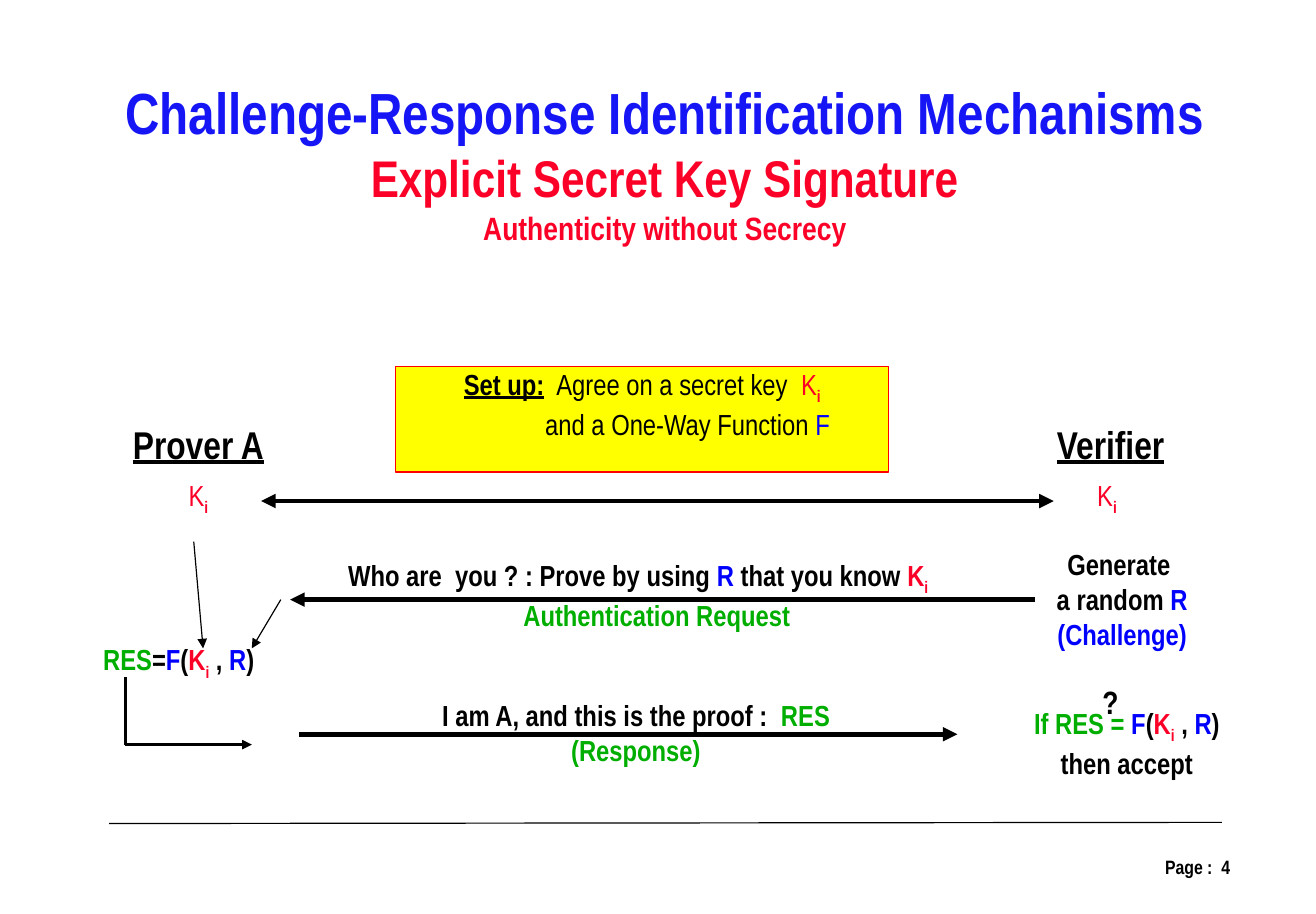
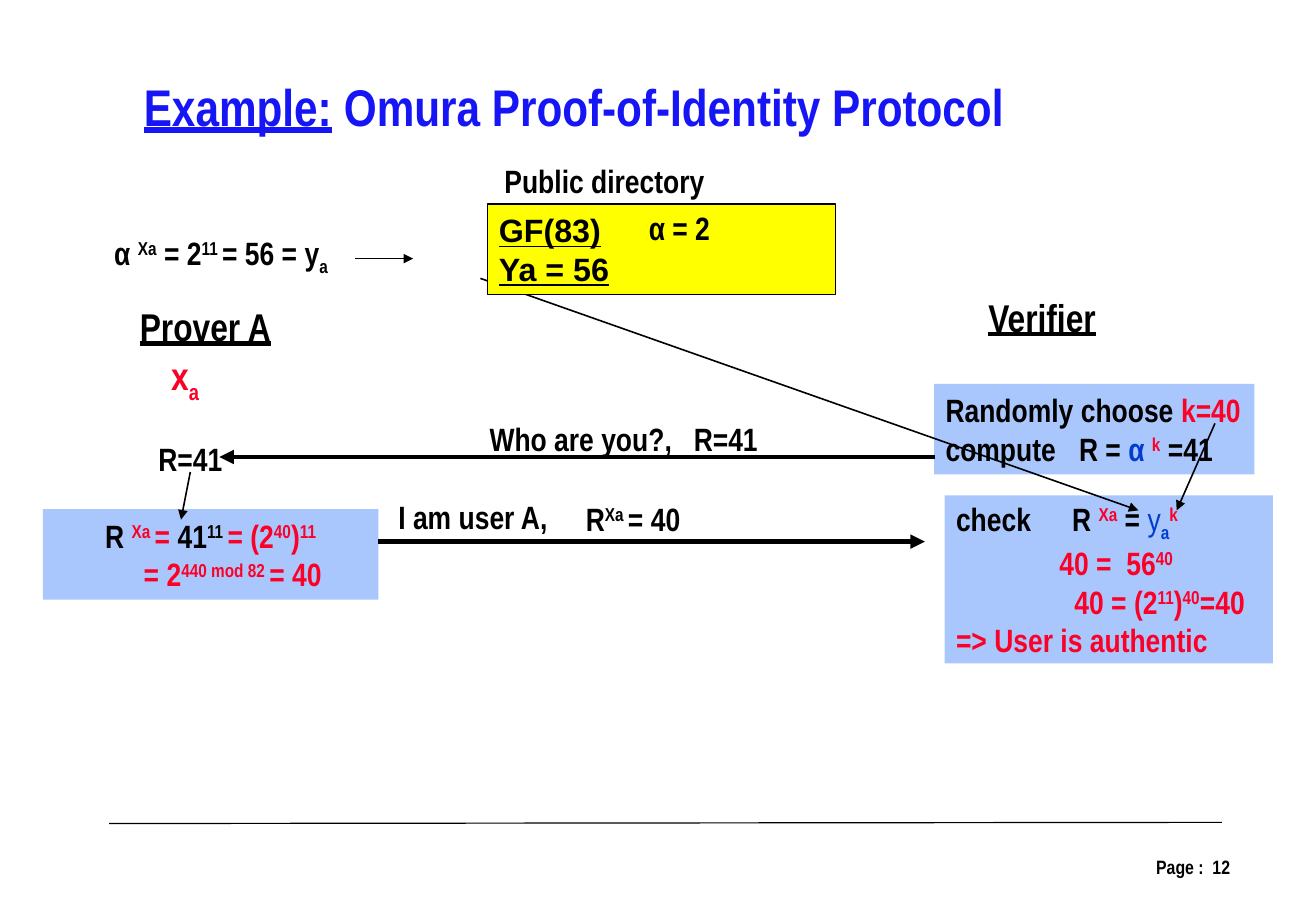
from dataclasses import dataclass

from lxml.etree import SubElement
from pptx import Presentation
from pptx.dml.color import RGBColor
from pptx.enum.shapes import MSO_CONNECTOR, MSO_SHAPE
from pptx.enum.text import MSO_ANCHOR, MSO_AUTO_SIZE, PP_ALIGN
from pptx.oxml.ns import qn
from pptx.util import Inches, Pt


@dataclass(frozen=True)
class Theme:
    font: str = "Arial Narrow"
    black: str = "000000"
    title: str = "1515F5"
    red: str = "FC0128"
    blue: str = "0000FF"
    navy: str = "023DD0"
    green: str = "00AE00"
    yellow: str = "FFFF00"
    pale: str = "A9C7FD"
    edge: str = "FF0000"
    huge: int = 36
    big: int = 32
    role: int = 24
    mid: int = 20
    body: int = 18
    foot: int = 12
    hair: float = 0.75
    thin: float = 1
    firm: float = 1.5
    bold: float = 3


T = Theme()
LEFT, MID, RIGHT = PP_ALIGN.LEFT, PP_ALIGN.CENTER, PP_ALIGN.RIGHT
BASE = {"sub": "-25000", "sup": "30000"}


def write(shape, lines, size, align=MID, indents=(), tab=0,
          anchor=MSO_ANCHOR.MIDDLE, font=T.font):
    """Fill a shape with lines of runs: (text, colour, marks, own size)."""
    frame = shape.text_frame
    frame.auto_size = MSO_AUTO_SIZE.NONE
    frame.word_wrap = align != MID or bool(indents)
    frame.vertical_anchor = anchor
    frame.margin_left = Inches(0.1)
    frame.margin_right = Inches(0 if align == LEFT else 0.1)
    frame.margin_top = frame.margin_bottom = Inches(0.05)
    for i, line in enumerate(lines):
        para = frame.paragraphs[0] if i == 0 else frame.add_paragraph()
        para.alignment = align
        props = para._p.get_or_add_pPr()
        if indents:
            props.set("marL", str(Inches(indents[i])))
            props.set("indent", "0")
        if tab:
            stops = SubElement(props, qn("a:tabLst"))
            SubElement(stops, qn("a:tab"), pos=str(Inches(tab)), algn="l")
        for text, color, *more in line:
            marks = more[0].split() if more else []
            run = para.add_run()
            run.text = text
            run.font.name = font
            run.font.size = Pt(more[1] if len(more) > 1 else size)
            run.font.bold = "plain" not in marks
            run.font.underline = "under" in marks
            run.font.color.rgb = RGBColor.from_string(color)
            for mark in BASE.keys() & set(marks):
                run._r.get_or_add_rPr().set("baseline", BASE[mark])


def draw(slide, start, end, width, heads=("tailEnd",)):
    points = [Inches(n) for n in (*start, *end)]
    link = slide.shapes.add_connector(MSO_CONNECTOR.STRAIGHT, *points)
    link.line.width = Pt(width)
    link.line.color.rgb = RGBColor.from_string(T.black)
    for head in heads:
        SubElement(link.line._get_or_add_ln(), qn(f"a:{head}"), type="triangle")
    SubElement(link._element.spPr, qn("a:effectLst"))


deck = Presentation()
deck.slide_width, deck.slide_height = Inches(11.34), Inches(7.88)

# Titles, rules and page numbers
pages = [
    (4, (0.94, 0.61, 9.58, 1.58), [
        [("Challenge-Response Identification Mechanisms", T.title, "", T.huge)],
        [("Explicit Secret Key Signature", T.red)],
        [("Authenticity without Secrecy", T.red, "", T.mid)]]),
    (12, (1.11, 0.6, 7.68, 0.64), [
        [("Example:", T.title, "under"),
         (" Omura Proof-of-Identity Protocol", T.title)]]),
]
for number, place, lines in pages:
    slide = deck.slides.add_slide(deck.slide_layouts[5])
    title = slide.shapes.title
    title.left, title.top, title.width, title.height = map(Inches, place)
    write(title, lines, T.big, anchor=MSO_ANCHOR.TOP)
    draw(slide, (0.94, 7.1), (10.53, 7.09), T.hair, ())
    foot = slide.shapes.add_textbox(*map(Inches, (8.14, 7.31, 2.56, 0.32)))
    write(foot, [[(f"Page :  {number}", T.black)]], T.foot, RIGHT)

first, second = deck.slides

# Filled boxes
key = [("K", T.red, "plain"), ("i", T.red, "sub")]
setup = [
    [("Set up:", T.black, "under"),
     ("  Agree on a secret key  ", T.black, "plain"), *key],
    [("and a One-Way Function ", T.black, "plain"), ("F", T.blue, "plain")],
]
choose = [
    [("Randomly choose ", T.black), ("k=40", T.red)],
    [("compute\tR = ", T.black), ("α ", T.navy), ("k", T.red, "sup"),
     (" =41", T.black)],
]
answer = [
    [("R ", T.black), ("Xa ", T.red, "sup"), ("= ", T.red), ("41", T.black),
     ("11 ", T.black, "sup"), ("= (2", T.red), ("40", T.red, "sup"),
     (")", T.red), ("11", T.red, "sup")],
    [("= 2", T.red), ("440 mod 82 ", T.red, "sup"), ("= 40", T.red)],
]
check = [
    [("check\tR ", T.black), ("Xa", T.red, "sup"), (" = ", T.black),
     ("y", T.navy, "plain"), ("a", T.navy, "sub"), ("k", T.red, "sup")],
    [("40 =  56", T.red), ("40", T.red, "sup")],
    [("40 = (2", T.red), ("11", T.red, "sup"), (")", T.red),
     ("40", T.red, "sup"), ("=40", T.red)],
    [("=> User is authentic", T.red)],
]
entry = [[("GF(83)", T.black, "under")], [("Ya = 56", T.black, "under")]]

boxes = [
    (first, (3.41, 3.16, 4.25, 0.91), T.yellow, T.edge, T.hair, setup, T.body,
     dict(indents=(0, 0.78), anchor=MSO_ANCHOR.TOP)),
    (second, (8.05, 3.31, 2.76, 0.78), T.pale, None, 0, choose, T.mid,
     dict(align=LEFT, tab=1.15)),
    (second, (0.37, 4.39, 2.89, 0.78), T.pale, None, 0, answer, T.mid,
     dict(indents=(0, 0.38))),
    (second, (8.14, 4.27, 2.83, 1.45), T.pale, None, 0, check, T.mid,
     dict(align=LEFT, indents=(0, 0.89, 1.02, 0), tab=0.85)),
    (second, (4.2, 1.76, 3, 0.78), T.yellow, T.black, T.thin, entry, T.mid,
     dict(align=LEFT, font="Arial")),
]
# The diagonal passes over the pale boxes and under the yellow one
for slide, place, fill, edge, width, lines, size, extra in boxes:
    if lines is entry:
        draw(second, (4.14, 2.4), (9.81, 4.4), T.thin)
    box = slide.shapes.add_shape(MSO_SHAPE.RECTANGLE, *map(Inches, place))
    box.shadow.inherit = False
    box.fill.solid()
    box.fill.fore_color.rgb = RGBColor.from_string(fill)
    if edge:
        box.line.color.rgb = RGBColor.from_string(edge)
        box.line.width = Pt(width)
    else:
        box.line.fill.background()
    write(box, lines, size, **extra)
    if lines is setup:
        box.text_frame.margin_top = 0

# Arrows
arrows = [
    (first, (8.92, 5.17), (2.5, 5.17), T.bold),
    (first, (2.58, 6.33), (8.25, 6.33), T.bold),
    (first, (2.42, 5.17), (2.17, 5.59), T.hair),
    (first, (1.67, 4.67), (1.75, 5.59), T.hair),
    (first, (1.08, 6.42), (2.17, 6.42), T.firm),
    (second, (8.06, 3.94), (1.89, 3.94), T.bold),
    (second, (3.26, 4.67), (7.97, 4.67), T.bold),
    (second, (3.06, 2.23), (3.56, 2.23), T.thin),
    (second, (1.64, 4.07), (1.56, 4.48), T.thin),
    (second, (10.47, 3.65), (10.14, 4.4), T.thin),
]
for arrow in arrows:
    draw(*arrow)
draw(first, (9.08, 4.32), (2.25, 4.32), T.bold, ("headEnd", "tailEnd"))
draw(first, (1.08, 5.84), (1.08, 6.42), T.firm, ())

# Labels
prover = [[("Prover A", T.black, "under")]]
tester = [[("Verifier", T.black, "under")]]
proof = [("F", T.blue), ("(", T.black), ("K", T.red), ("i", T.red, "sub"),
         (" , ", T.black), ("R", T.blue), (")", T.black)]
labels = [
    (first, (1.04, 3.58, 1.34, 0.5), T.role, prover),
    (first, (9, 3.58, 1.14, 0.5), T.role, tester),
    (first, (1.52, 4.08, 0.38, 0.41), T.body, [key]),
    (first, (9.35, 4.08, 0.38, 0.41), T.body, [key]),
    (first, (2.87, 4.77, 5.26, 0.41), T.body, [
        [("Who are  you ? : Prove by using ", T.black), ("R", T.blue),
         (" that you know ", T.black), ("K", T.red), ("i", T.red, "sub")]]),
    (first, (4.4, 5.1, 2.52, 0.41), T.body, [
        [("Authentication Request", T.green)]]),
    (first, (9, 4.66, 1.34, 1.01), T.body, [
        [("Generate ", T.black)],
        [("a random ", T.black), ("R", T.blue)],
        [("(Challenge)", T.blue)]]),
    (first, (0.78, 5.5, 1.52, 0.41), T.body, [
        [("RES", T.green), ("=", T.black), *proof]]),
    (first, (3.69, 5.96, 3.58, 0.71), T.body, [
        [("I am A, and this is the proof :  ", T.black), ("RES", T.green)],
        [("(Response)", T.green)]]),
    (first, (8.8, 6.05, 1.82, 0.71), T.body, [
        [("If RES = ", T.green), *proof], [("then accept", T.black)]]),
    (first, (9.4, 5.83, 0.34, 0.44), T.mid, [[("?", T.black)]]),
    (second, (1.1, 2.56, 1.34, 0.5), T.role, prover),
    (second, (8.41, 2.48, 1.14, 0.5), T.role, tester),
    (second, (1.37, 3.01, 0.45, 0.51), T.role, [
        [("x", T.red), ("a", T.red, "sub")]]),
    (second, (0.83, 1.98, 2.15, 0.44), T.mid, [
        [("α ", T.black), ("Xa", T.black, "sup"), (" = 2", T.black),
         ("11 ", T.black, "sup"), ("= 56 = y", T.black),
         ("a", T.black, "sub")]]),
    (second, (3.3, 4.23, 1.55, 0.44), T.mid, [[("I am user A,", T.black)]]),
    (second, (4.93, 4.25, 1.05, 0.44), T.mid, [
        [("R", T.black), ("Xa ", T.black, "sup"), ("= 40", T.black)]]),
    (second, (1.23, 3.73, 0.82, 0.44), T.mid, [[("R=41", T.black)]]),
    (second, (4.21, 1.34, 2, 0.44), T.mid, [[("Public directory", T.black)]]),
    (second, (5.47, 1.74, 0.77, 0.44), T.mid, [[("α = 2", T.black)]]),
]
for slide, place, size, lines in labels:
    write(slide.shapes.add_textbox(*map(Inches, place)), lines, size)
ask = second.shapes.add_textbox(*map(Inches, (4.12, 3.56, 2.59, 0.44)))
write(ask, [[("Who are you?,\tR=41", T.black)]], T.mid, LEFT, tab=1.76)

deck.save("out.pptx")
